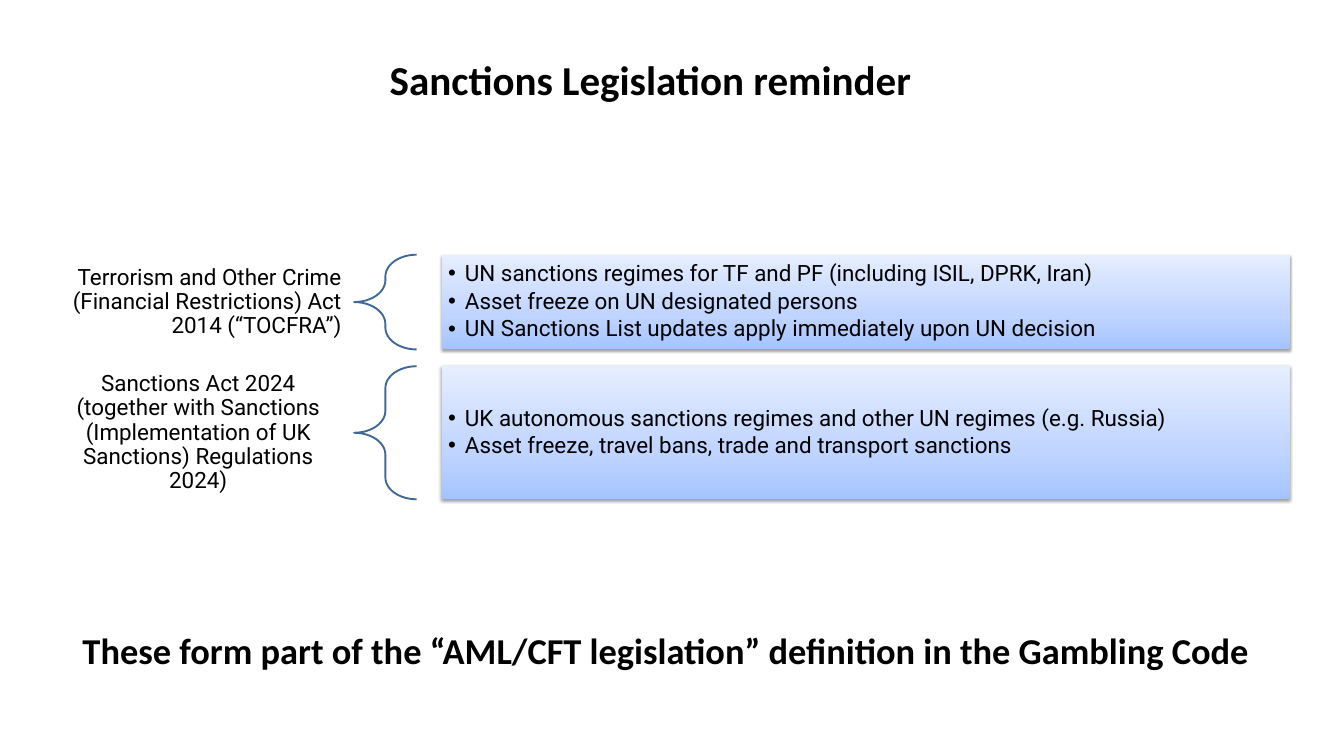
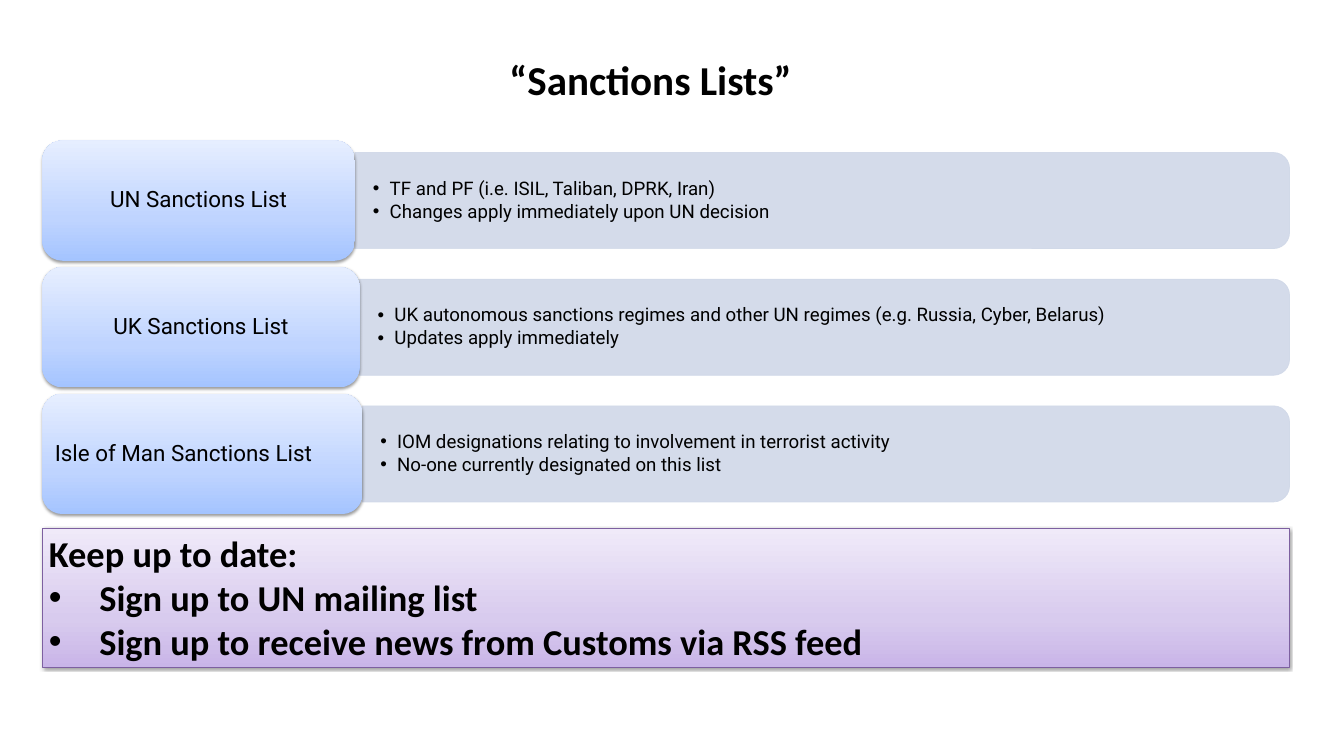
from lxml import etree
from pptx import Presentation
from pptx.dml.color import RGBColor
from pptx.enum.shapes import MSO_SHAPE as SHAPE
from pptx.enum.text import MSO_ANCHOR as ANCHOR, PP_ALIGN as ALIGN
from pptx.oxml import parse_xml
from pptx.oxml.ns import nsdecls, qn
from pptx.util import Inches, Pt

LEGISLATION = {
    "title": "Sanctions Legislation reminder",
    "acts": [
        {"name": "Terrorism and Other Crime (Financial Restrictions) Act 2014 (“TOCFRA”)",
         "align": ALIGN.RIGHT, "height": 1.41,
         "points": ["UN sanctions regimes for TF and PF (including ISIL, DPRK, Iran)",
                    "Asset freeze on UN designated persons",
                    "UN Sanctions List updates apply immediately upon UN decision"]},
        {"name": "Sanctions Act 2024 (together with Sanctions (Implementation of UK "
                 "Sanctions) Regulations 2024)",
         "align": ALIGN.CENTER, "height": 1.98,
         "points": ["UK autonomous sanctions regimes and other UN regimes (e.g. Russia)",
                    "Asset freeze, travel bans, trade and transport sanctions"]},
    ],
    "conclusion": "These form part of the “AML/CFT legislation” definition in the Gambling Code",
}
LISTS = {
    "title": "“Sanctions Lists”",
    "lists": [
        {"name": "UN Sanctions List", "align": ALIGN.CENTER, "width": 4.65,
         "points": ["TF and PF (i.e. ISIL, Taliban, DPRK, Iran)",
                    "Changes apply immediately upon UN decision"]},
        {"name": "UK Sanctions List", "align": ALIGN.CENTER, "width": 4.72,
         "points": ["UK autonomous sanctions regimes and other UN regimes "
                    "(e.g. Russia, Cyber, Belarus)",
                    "Updates apply immediately"]},
        {"name": "Isle of Man Sanctions List", "align": ALIGN.LEFT, "width": 4.76,
         "points": ["IOM designations relating to involvement in terrorist activity",
                    "No-one currently designated on this list"]},
    ],
    "reminder": "Keep up to date:",
    "actions": ["Sign up to UN mailing list",
                "Sign up to receive news from Customs via RSS feed"],
}

BLACK, BRACE, BAND, PURPLE_LINE = "000000", "3F6797", "D0D8E8", "7D60A0"
BLUES = [(0, "A4C4FF"), (35, "BFD4FF"), (100, "E6EEFF")]
PURPLES = [(0, "C9B5E8"), (35, "D8CBEE"), (100, "F0EAF9")]
LEFT, RIGHT = 0.63, 19.19
WIDTH = RIGHT - LEFT
HEADING = {"font": "Calibri", "bold": True}


def colour(value):
    return RGBColor.from_string(value)


def add_bullet(paragraph, indent):
    props = paragraph._p.get_or_add_pPr()
    props.set("marL", str(Inches(indent)))
    props.set("indent", str(-Inches(indent)))
    etree.SubElement(props, qn("a:buFont")).set("typeface", "Arial")
    etree.SubElement(props, qn("a:buChar")).set("char", "•")


def write(shape, lines, size=24, font="Roboto", bold=False, align=ALIGN.LEFT,
          anchor=ANCHOR.MIDDLE, insets=(0.1, 0.05), indent=0, plain_lines=0,
          spacing=None, after=0):
    """Fill a shape with paragraphs; with an indent, those after plain_lines get bullets."""
    frame = shape.text_frame
    frame.word_wrap = True
    frame.vertical_anchor = anchor
    frame.margin_left = frame.margin_right = Inches(insets[0])
    frame.margin_top = frame.margin_bottom = Inches(insets[1])
    for number, line in enumerate(lines):
        paragraph = frame.paragraphs[0] if number == 0 else frame.add_paragraph()
        if indent and number >= plain_lines:
            add_bullet(paragraph, indent)
        paragraph.alignment = align
        if spacing:
            paragraph.line_spacing = spacing
        if after:
            paragraph.space_after = Pt(size * after)
        run = paragraph.add_run()
        run.text = line
        run.font.size, run.font.name, run.font.bold = Pt(size), font, bold
        run.font.color.rgb = colour(BLACK)


def add_text(slide, box, lines, **style):
    write(slide.shapes.add_textbox(*map(Inches, box)), lines, **style)


def add_outline(slide, kind, box, line=None, line_width=0.75):
    shape = slide.shapes.add_shape(kind, *map(Inches, box))
    shape.shadow.inherit = False
    shape.fill.background()
    if line:
        shape.line.color.rgb = colour(line)
        shape.line.width = Pt(line_width)
    else:
        shape.line.fill.background()
    return shape


def add_panel(slide, kind, box, stops, line=None):
    """Add a shape with a bottom-to-top gradient and a soft shadow below it."""
    panel = add_outline(slide, kind, box, line)
    props = panel._element.spPr
    stop_xml = "".join(f'<a:gs pos="{at * 1000}"><a:srgbClr val="{value}"/></a:gs>'
                       for at, value in stops)
    props.replace(props.find(qn("a:noFill")), parse_xml(
        f'<a:gradFill {nsdecls("a")} rotWithShape="1"><a:gsLst>{stop_xml}</a:gsLst>'
        '<a:lin ang="16200000" scaled="0"/></a:gradFill>'))
    props.find(qn("a:effectLst")).append(parse_xml(
        f'<a:outerShdw {nsdecls("a")} blurRad="{Pt(3.1)}" dist="{Pt(1.6)}" dir="5400000" '
        'rotWithShape="0"><a:srgbClr val="000000"><a:alpha val="38000"/></a:srgbClr>'
        '</a:outerShdw>'))
    return panel


def add_band(slide, left, middle, height):
    """Add a band up to the right margin, rounded at its right end only."""
    length = RIGHT - left
    box = (left + (length - height) / 2, middle - length / 2, height, length)
    band = add_outline(slide, SHAPE.ROUND_2_SAME_RECTANGLE, box, BAND)
    band.rotation = 90
    band.fill.solid()
    band.fill.fore_color.rgb = colour(BAND)
    for tint in band._element.spPr.iter(qn("a:srgbClr")):
        etree.SubElement(tint, qn("a:alpha")).set("val", "90000")


def add_titled_slide(deck, title):
    slide = deck.slides.add_slide(deck.slide_layouts[6])
    add_text(slide, (1.81, 0.25, 15.75, 1.84), [title], size=44, align=ALIGN.CENTER, **HEADING)
    return slide


def build_legislation(deck):
    slide = add_titled_slide(deck, LEGISLATION["title"])
    name_width, brace_width, points_left, gap = 4.64, 0.93, 6.57, 0.25
    top = 3.79
    for act in LEGISLATION["acts"]:
        height = act["height"]
        add_text(slide, (LEFT, top, name_width, height), [act["name"]],
                 align=act["align"], insets=(0.19, 0.07), spacing=0.9)
        brace = add_outline(slide, SHAPE.LEFT_BRACE,
                            (LEFT + name_width, top, brace_width, height), BRACE, 2)
        brace.adjustments[0] = 0.35
        points = add_panel(slide, SHAPE.RECTANGLE,
                           (points_left, top, RIGHT - points_left, height), BLUES)
        write(points, act["points"], insets=(0.1, 0.1), indent=0.25, spacing=0.9, after=0.15)
        top += height + gap
    add_text(slide, (LEFT, 9.3, WIDTH, 0.76), [LEGISLATION["conclusion"]],
             size=39, align=ALIGN.CENTER, anchor=ANCHOR.TOP, **HEADING)


def build_lists(deck):
    slide = add_titled_slide(deck, LISTS["title"])
    first_top, pitch, name_height, band_height = 2.09, 1.885, 1.79, 1.43
    for row, entry in enumerate(LISTS["lists"]):
        top = first_top + row * pitch
        middle = top + name_height / 2
        band_left = LEFT + entry["width"]
        add_band(slide, band_left, middle, band_height)
        add_text(slide, (band_left, middle - 0.64, RIGHT - band_left - 0.07, 1.28),
                 entry["points"], size=20, insets=(0.27, 0.14), indent=0.25,
                 spacing=0.9, after=0.15)
        name = add_panel(slide, SHAPE.ROUNDED_RECTANGLE,
                         (LEFT, top, entry["width"], name_height), BLUES)
        write(name, [entry["name"]], align=entry["align"], spacing=0.9)
    reminder = add_panel(slide, SHAPE.RECTANGLE, (LEFT, 7.86, WIDTH, 2.07), PURPLES, PURPLE_LINE)
    write(reminder, [LISTS["reminder"], *LISTS["actions"]], size=39, anchor=ANCHOR.TOP,
          indent=0.75, plain_lines=1, **HEADING)


def main():
    deck = Presentation()
    deck.slide_width, deck.slide_height = Inches(20), Inches(11.25)
    build_legislation(deck)
    build_lists(deck)
    deck.save("out.pptx")


if __name__ == "__main__":
    main()
